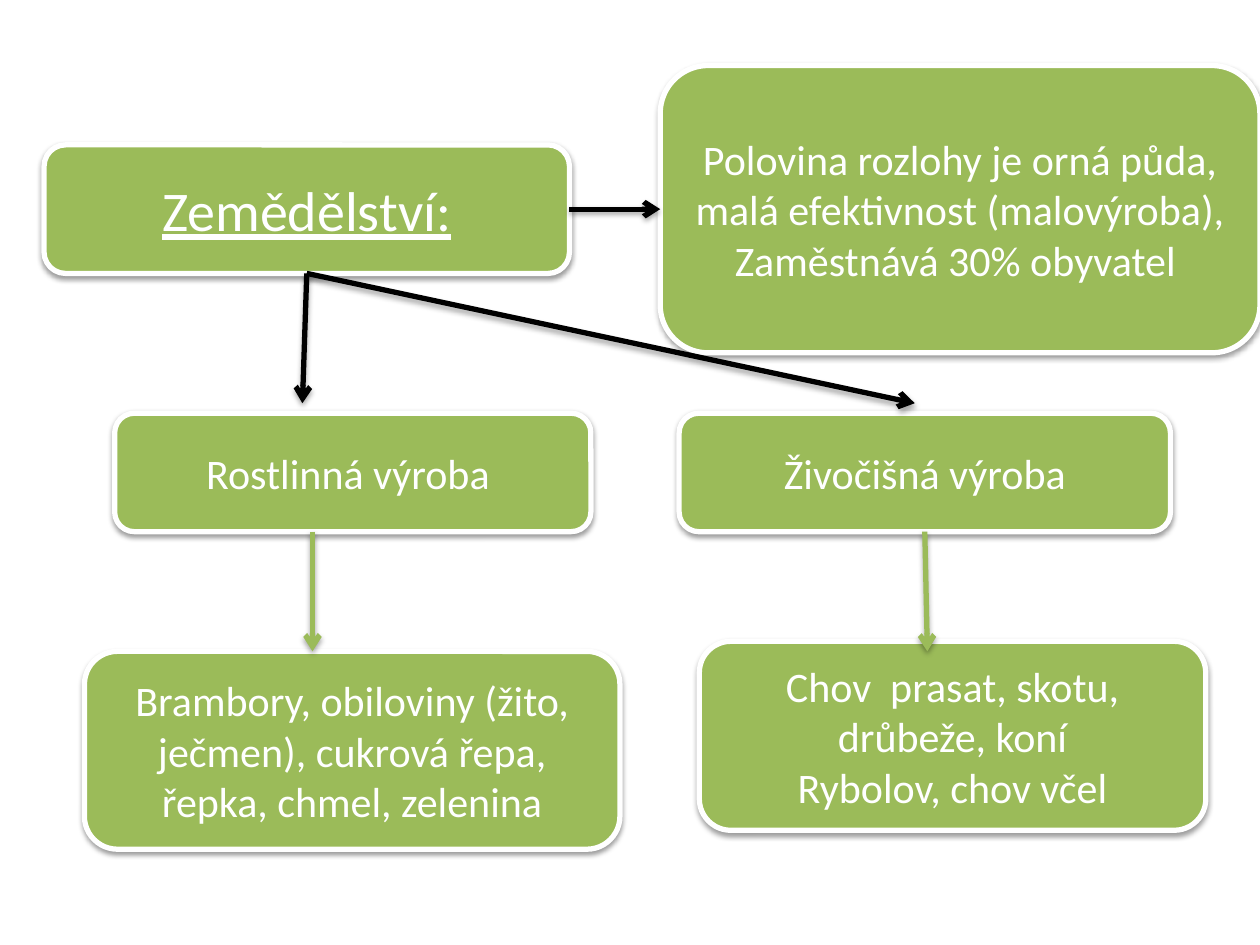
from dataclasses import dataclass

import lxml.etree
import pptx
import pptx.dml.color
import pptx.enum.shapes
import pptx.enum.text
import pptx.oxml.ns
import pptx.util

Inches = pptx.util.Inches
Pt = pptx.util.Pt
RGBColor = pptx.dml.color.RGBColor
qn = pptx.oxml.ns.qn

TOP, LEFT, BOTTOM, RIGHT = range(4)


@dataclass(frozen=True)
class Theme:
    font: str = "Calibri"
    title_size: int = 32
    body_size: int = 24
    line_width: int = 3
    green: RGBColor = RGBColor(0x9B, 0xBB, 0x59)
    white: RGBColor = RGBColor(0xFF, 0xFF, 0xFF)
    black: RGBColor = RGBColor(0, 0, 0)
    shadow_blur: float = 3.1
    box_shadow: tuple = (38, 1.6)  # opacity in percent, distance in points
    arrow_shadow: tuple = (35, 1.8)


class Diagram:
    def __init__(self, slide, theme):
        self.slide = slide
        self.theme = theme

    def add_shadow(self, effects, opacity, distance):
        shadow = lxml.etree.SubElement(
            effects, qn("a:outerShdw"), blurRad=str(Pt(self.theme.shadow_blur)),
            dist=str(Pt(distance)), dir="5400000", rotWithShape="0")
        color = lxml.etree.SubElement(shadow, qn("a:srgbClr"), val=str(self.theme.black))
        lxml.etree.SubElement(color, qn("a:alpha"), val=str(opacity * 1000))

    def box(self, left, top, width, height, *lines, heading=False):
        theme = self.theme
        shape = self.slide.shapes.add_shape(
            pptx.enum.shapes.MSO_SHAPE.ROUNDED_RECTANGLE,
            Inches(left), Inches(top), Inches(width), Inches(height))
        shape.fill.solid()
        shape.fill.fore_color.rgb = theme.green
        shape.line.color.rgb = theme.white
        shape.line.width = Pt(theme.line_width)
        shape.shadow.inherit = False
        self.add_shadow(shape.element.spPr.find(qn("a:effectLst")), *theme.box_shadow)

        frame = shape.text_frame
        frame.word_wrap = True
        frame.vertical_anchor = pptx.enum.text.MSO_ANCHOR.MIDDLE
        frame.text = "\n".join(lines)
        for paragraph in frame.paragraphs:
            paragraph.alignment = pptx.enum.text.PP_ALIGN.CENTER
            paragraph.font.name = theme.font
            paragraph.font.size = Pt(theme.title_size if heading else theme.body_size)
            paragraph.font.color.rgb = theme.white
            if heading:
                paragraph.font.underline = True
        return shape

    def arrow(self, start, end, color, source=None, target=None):
        """source and target are (box, side) pairs that the ends are joined to."""
        connector = self.slide.shapes.add_connector(
            pptx.enum.shapes.MSO_CONNECTOR.STRAIGHT,
            *(Inches(value) for value in (*start, *end)))
        if source:
            connector.begin_connect(*source)
        if target:
            connector.end_connect(*target)
        connector.line.color.rgb = color
        connector.line.width = Pt(self.theme.line_width)
        properties = connector.element.spPr
        lxml.etree.SubElement(properties.find(qn("a:ln")), qn("a:tailEnd"), type="arrow")
        effects = lxml.etree.SubElement(properties, qn("a:effectLst"))
        self.add_shadow(effects, *self.theme.arrow_shadow)


def main():
    presentation = pptx.Presentation()
    presentation.slide_width = Inches(10)
    presentation.slide_height = Inches(7.5)
    theme = Theme()
    diagram = Diagram(presentation.slides.add_slide(presentation.slide_layouts[6]), theme)

    # Branches and their products, with the main topic between them
    livestock = diagram.box(5.39, 3.28, 3.9, 0.94, "Živočišná výroba")
    diagram.box(0.67, 5.17, 4.25, 1.57,
                "Brambory, obiloviny (žito, ječmen), cukrová řepa, řepka, chmel, zelenina")
    agriculture = diagram.box(0.35, 1.15, 4.17, 1.02, "Zemědělství:", heading=True)
    diagram.box(0.91, 3.28, 3.78, 0.94, "Rostlinná výroba ")
    diagram.box(5.55, 5.09, 4.02, 1.5,
                "Chov  prasat, skotu, drůbeže, koní", "Rybolov, chov včel")

    # Key facts
    facts = diagram.box(5.24, 0.52, 4.76, 2.28,
                        "Polovina rozlohy je orná půda,",
                        "malá efektivnost (malovýroba),",
                        "Zaměstnává 30% obyvatel ")

    # Arrows from the branches to their products
    diagram.arrow((2.48, 4.22), (2.48, 5.17), theme.green)
    diagram.arrow((7.34, 4.22), (7.36, 5.17), theme.green, source=(livestock, BOTTOM))

    # Arrows from the main topic to the branches and the facts
    for branch_x in (2.4, 7.26):
        diagram.arrow((2.44, 2.18), (branch_x, 3.2), theme.black,
                      source=(agriculture, BOTTOM))
    diagram.arrow((4.53, 1.66), (5.24, 1.66), theme.black,
                  source=(agriculture, RIGHT), target=(facts, LEFT))

    presentation.save("out.pptx")


if __name__ == "__main__":
    main()
